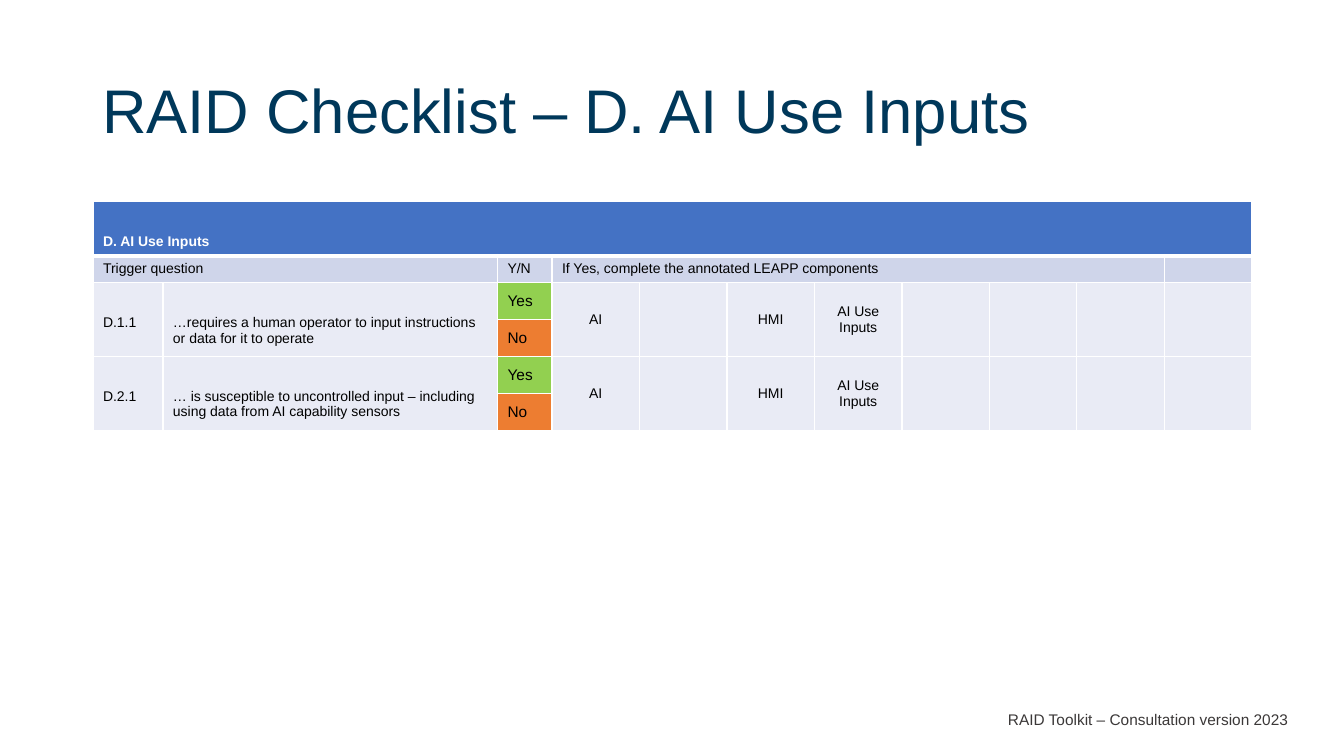
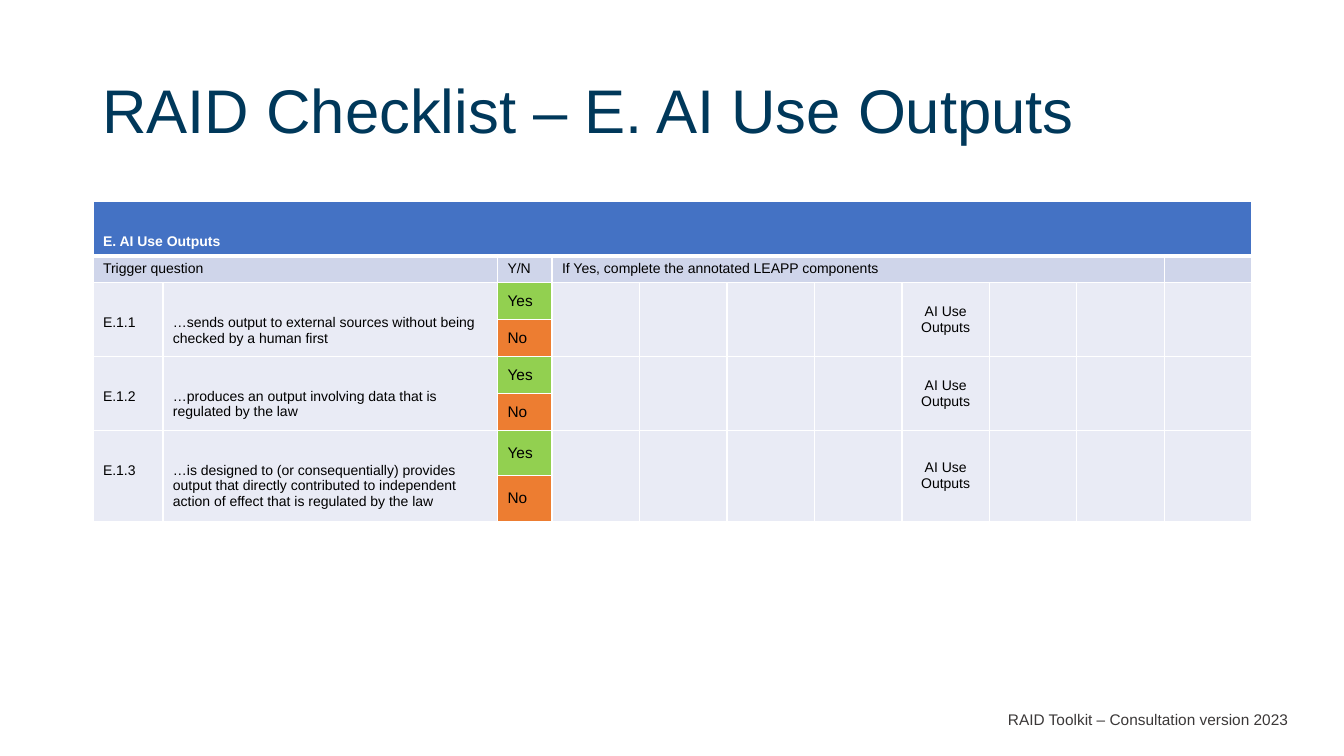
from dataclasses import dataclass

from lxml.etree import SubElement
from pptx import Presentation
from pptx.dml.color import RGBColor
from pptx.enum.text import MSO_ANCHOR as Anchor, PP_ALIGN as Align
from pptx.oxml.ns import qn
from pptx.util import Pt

FONT = "Arial"
COLORS = {
    "title": "00385A",
    "footer": "3B3838",
    "header": "4472C4",
    "subheader": "CFD5EA",
    "body": "E9EBF5",
    "yes": "92D050",
    "no": "ED7D31",
    "text": "000000",
    "white": "FFFFFF",
}
COLUMNS = [50, 239, 39] + [62.5] * 8
YN_COL, FIRST_COMPONENT, LAST_COL = 2, 3, len(COLUMNS) - 1
HEADER_HEIGHT, SUBHEADER_HEIGHT = 38, 18.7
LOW_TEXT = 23


@dataclass
class Question:
    code: str
    text: str
    components: dict[int, str]
    row_height: float = 26.4


@dataclass
class Checklist:
    name: str
    questions: list[Question]


INPUTS = {0: "AI", 2: "HMI", 3: "AI Use Inputs"}
OUTPUTS = {4: "AI Use Outputs"}
CHECKLISTS = [
    Checklist("D. AI Use Inputs", [
        Question("D.1.1", "…requires a human operator to input instructions or data for it to operate", INPUTS),
        Question("D.2.1", "… is susceptible to uncontrolled input – including using data from AI capability sensors",
                 INPUTS),
    ]),
    Checklist("E. AI Use Outputs", [
        Question("E.1.1", "…sends output to external sources without being checked by a human first", OUTPUTS),
        Question("E.1.2", "…produces an output involving data that is regulated by the law", OUTPUTS),
        Question("E.1.3", "…is designed to (or consequentially) provides output that directly contributed to "
                 "independent action of effect that is regulated by the law", OUTPUTS, 32.4),
    ]),
]


def rgb(name: str) -> RGBColor:
    return RGBColor.from_string(COLORS[name])


def write(tf, text: str, *, size: float = 10, color: str = "text", bold: bool = False,
          align: Align = Align.LEFT, spacing: float = 1.0) -> None:
    p = tf.paragraphs[0]
    p.alignment = align
    p.line_spacing = spacing
    r = p.add_run()
    r.text = text
    r.font.name = FONT
    r.font.size = Pt(size)
    r.font.bold = bold
    r.font.color.rgb = rgb(color)


def add_text(slide, box: tuple, text: str, *, anchor: Anchor = Anchor.TOP, **style) -> None:
    tf = slide.shapes.add_textbox(*map(Pt, box)).text_frame
    tf.word_wrap = True
    tf.vertical_anchor = anchor
    write(tf, text, **style)


def set_borders(cell, **widths: float) -> None:
    tc_pr = cell._tc.get_or_add_tcPr()
    for side in "LRTB":
        ln = SubElement(tc_pr, qn(f"a:ln{side}"), w=str(Pt(widths.get(side, 1))))
        fill = SubElement(ln, qn("a:solidFill"))
        SubElement(fill, qn("a:srgbClr"), val=COLORS["white"])


def set_cell(cell, text: str, *, anchor: Anchor = Anchor.TOP, top: float = 3.6, **style) -> None:
    cell.vertical_anchor = anchor
    cell.margin_top = Pt(top)
    write(cell.text_frame, text, **style)


def cell_fill(row: int, col: int) -> str:
    if row < 2:
        return ("header", "subheader")[row]
    if col == YN_COL:
        return ("yes", "no")[row % 2]
    return "body"


def format_grid(table) -> None:
    for i, row in enumerate(table.rows):
        for j, cell in enumerate(row.cells):
            edge = {0: {"B": 3}, 1: {"T": 3}}.get(i, {})
            set_borders(cell, **edge)
            cell.fill.solid()
            cell.fill.fore_color.rgb = rgb(cell_fill(i, j))
            if not cell.text_frame.text:
                SubElement(cell.text_frame.paragraphs[0]._p, qn("a:endParaRPr"), sz="1000")


def add_question(table, row: int, question: Question) -> None:
    for col in range(LAST_COL + 1):
        if col != YN_COL:
            table.cell(row, col).merge(table.cell(row + 1, col))
    set_cell(table.cell(row, 0), question.code, top=LOW_TEXT)
    set_cell(table.cell(row, 1), question.text, top=LOW_TEXT)
    for offset, answer in enumerate(("Yes", "No")):
        set_cell(table.cell(row + offset, YN_COL), answer, anchor=Anchor.MIDDLE, size=11)
    for index, component in question.components.items():
        set_cell(table.cell(row, FIRST_COMPONENT + index), component,
                 anchor=Anchor.MIDDLE, align=Align.CENTER)


def add_checklist(slide, checklist: Checklist) -> None:
    heights = [HEADER_HEIGHT, SUBHEADER_HEIGHT]
    for question in checklist.questions:
        heights += [question.row_height] * 2
    table = slide.shapes.add_table(len(heights), len(COLUMNS), Pt(66.4), Pt(144),
                                   Pt(sum(COLUMNS)), Pt(sum(heights))).table
    table.first_row = table.horz_banding = False
    for column, width in zip(table.columns, COLUMNS):
        column.width = Pt(width)
    for row, height in zip(table.rows, heights):
        row.height = Pt(height)

    table.cell(0, 0).merge(table.cell(0, LAST_COL))
    table.cell(1, 0).merge(table.cell(1, 1))
    table.cell(1, FIRST_COMPONENT).merge(table.cell(1, LAST_COL - 1))
    set_cell(table.cell(0, 0), checklist.name, top=LOW_TEXT, color="white", bold=True)
    set_cell(table.cell(1, 0), "Trigger question")
    set_cell(table.cell(1, YN_COL), "Y/N")
    set_cell(table.cell(1, FIRST_COMPONENT), "If Yes, complete the annotated LEAPP components")
    for i, question in enumerate(checklist.questions):
        add_question(table, 2 + 2 * i, question)
    format_grid(table)


def add_slide(prs, checklist: Checklist) -> None:
    slide = prs.slides.add_slide(prs.slide_layouts[6])
    add_text(slide, (448, 504, 479.5, 21), "RAID Toolkit – Consultation version 2023",
             size=11, color="footer", align=Align.RIGHT)
    add_text(slide, (66, 28.8, 828, 104.4), f"RAID Checklist – {checklist.name}",
             anchor=Anchor.MIDDLE, size=44, color="title", spacing=0.9)
    add_checklist(slide, checklist)


def main() -> None:
    prs = Presentation()
    prs.slide_width, prs.slide_height = Pt(960), Pt(540)
    for checklist in CHECKLISTS:
        add_slide(prs, checklist)
    prs.save("out.pptx")


if __name__ == "__main__":
    main()
